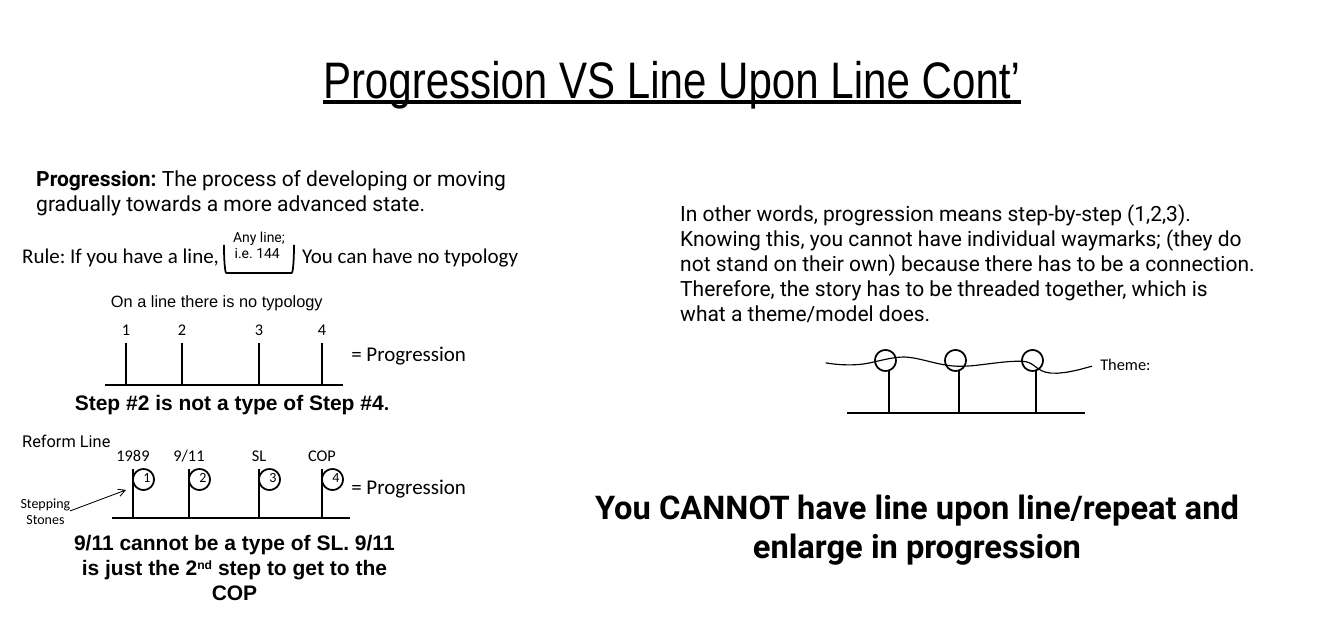
from dataclasses import dataclass
from lxml.etree import SubElement
from pptx import Presentation
from pptx.dml.color import RGBColor as Rgb
from pptx.enum.shapes import MSO_CONNECTOR as Link, MSO_SHAPE as Form
from pptx.enum.text import MSO_ANCHOR as Anchor, MSO_AUTO_SIZE as Fit, PP_ALIGN as Align
from pptx.oxml.ns import qn
from pptx.util import Inches, Pt


@dataclass(frozen=True)
class Theme:
    ink: Rgb = Rgb(0, 0, 0)
    paper: Rgb = Rgb(255, 255, 255)
    head: int = 44
    claim: int = 28
    body: int = 18
    label: int = 14
    note: int = 12
    thick: float = 1.5
    thin: float = 1
    hair: float = 0.75
    narrow: str = "Arial Narrow"
    plain: str = "Arial"
    round: str = "Roboto"
    soft: str = "Calibri"
    accent: str = "Lato"


COLS, ROWS = 192, 90


class Board:
    def __init__(self, deck, theme):
        self.theme = theme
        self.wide, self.high = deck.slide_width, deck.slide_height
        self.slide = deck.slides.add_slide(deck.slide_layouts[5])
        self.shapes = self.slide.shapes
        fill = self.slide.background.fill
        fill.solid()
        fill.fore_color.rgb = theme.paper

    def x(self, col):
        return round(self.wide * col / COLS)

    def y(self, row):
        return round(self.high * row / ROWS)

    def area(self, col, row, cols, rows):
        return self.x(col), self.y(row), self.x(cols), self.y(rows)

    def style(self, font, size, face, bold=False):
        font.size, font.name, font.bold = Pt(size), face, bold
        font.color.rgb = self.theme.ink

    def title(self, text, *area):
        item = self.shapes.title
        item.left, item.top, item.width, item.height = self.area(*area)
        frame = item.text_frame
        frame.text = text
        frame.vertical_anchor = Anchor.MIDDLE
        para = frame.paragraphs[0]
        para.alignment = Align.CENTER
        self.style(para.font, self.theme.head, self.theme.narrow)
        para.font.underline = True

    def text(self, text, area, size, face, mid=False, bold=False):
        frame = self.shapes.add_textbox(*self.area(*area)).text_frame
        frame.word_wrap = True
        frame.auto_size = Fit.SHAPE_TO_FIT_TEXT
        para = frame.paragraphs[0]
        para.alignment = Align.CENTER if mid else Align.LEFT
        self.style(para.font, size, face, bold)
        parts = [text] if isinstance(text, str) else text
        runs = []
        for part in parts:
            run = para.add_run()
            run.text = part
            runs.append(run)
        return runs

    def line(self, start, end, width=None, arrow=False):
        item = self.shapes.add_connector(
            Link.STRAIGHT, self.x(start[0]), self.y(start[1]), self.x(end[0]), self.y(end[1]))
        item.line.color.rgb = self.theme.ink
        item.line.width = Pt(width or self.theme.thick)
        if arrow:
            SubElement(item.line._get_or_add_ln(), qn("a:tailEnd"), type="arrow")
        SubElement(item._element.spPr, qn("a:effectLst"))

    def trim(self, item, width, fill=None):
        item.shadow.inherit = False
        item.line.color.rgb = self.theme.ink
        item.line.width = Pt(width)
        if fill is None:
            item.fill.background()
        else:
            item.fill.solid()
            item.fill.fore_color.rgb = fill

    def ring(self, col, row):
        item = self.shapes.add_shape(Form.OVAL, *self.area(col, row, 3, 3))
        self.trim(item, self.theme.thick)

    def cup(self, *area):
        item = self.shapes.add_shape(Form.LEFT_BRACKET, *self.area(*area))
        item.rotation = 270
        self.trim(item, self.theme.thick, self.theme.paper)

    def posts(self, cols, top, base, left, right):
        self.line((left, base), (right, base))
        for col in cols:
            self.line((col, top), (col, base))

    def thread(self, start, curves, steps=12):
        spots, last = [], start
        for one, two, end in curves:
            for step in range(1, steps + 1):
                t = step / steps
                u = 1 - t
                spots.append(tuple(
                    u**3 * a + 3 * u * u * t * b + 3 * u * t * t * c + t**3 * d
                    for a, b, c, d in zip(last, one, two, end)))
            last = end
        pen = self.shapes.build_freeform(Inches(start[0]), Inches(start[1]))
        pen.add_line_segments([(Inches(a), Inches(b)) for a, b in spots], close=False)
        self.trim(pen.convert_to_shape(), self.theme.thin)


def main():
    deck = Presentation()
    deck.slide_width, deck.slide_height = Inches(16), Inches(7.5)
    look = Theme()
    board = Board(deck, look)
    board.title("Progression VS Line Upon Line Cont’", 9.6, 3.6, 172.8, 15)

    terms = board.text(
        ["Progression: ", "The process of developing or moving gradually towards a more advanced state."],
        (4, 23, 77, 8.5), look.body, look.round)
    terms[0].font.bold = True
    board.text("Rule: If you have a line,", (2, 34, 31, 4.8), look.body, look.soft)
    board.cup(35, 32, 4, 10)
    board.text("Any line; i.e. 144 ", (32, 32, 10, 6), look.note, look.round, mid=True)
    board.text("You can have no typology", (42, 34, 35, 4.8), look.body, look.soft)

    board.text("On a line there is no typology", (9, 41, 44, 4), look.label, look.plain, mid=True)
    steps = (18, 26, 37, 46)
    board.posts(steps, 49, 55, 15, 49)
    for count, col in enumerate(steps, 1):
        board.text(str(count), (col - 3, 45, 6, 4), look.label, look.soft, mid=True)
    fact = board.text(["Step #2 is not a type of Step #4", ". "],
                      (8, 55, 51, 4.8), look.body, look.plain, mid=True, bold=True)
    fact[1].font.name = look.accent

    board.text("Reform Line", (2, 61, 18, 4), look.label, look.round)
    marks = {"1989": 19, "9/11": 27, "SL": 37, "COP": 46}
    board.posts(marks.values(), 67, 74, 16, 50)
    for count, (name, col) in enumerate(marks.items(), 1):
        board.text(name, (col - 4, 63, 8, 4), look.label, look.soft, mid=True)
        board.ring(col, 67)
        board.text(str(count), (col - 1, 66.4, 6, 3.6), look.note, look.soft, mid=True)
    for row in (48, 67):
        board.text("= Progression", (49, row, 20, 5), look.body, look.soft)
    board.text("Stepping Stones", (0, 70, 13, 6), look.note, look.soft, mid=True)
    board.line((10, 73), (18, 70), look.hair, arrow=True)
    end = board.text(
        ["9/11 cannot be a type of SL. 9/11 is just the 2", "nd", " step to get to the COP"],
        (8, 75, 51, 8.5), look.body, look.plain, mid=True, bold=True)
    end[1]._r.get_or_add_rPr().set("baseline", "30000")

    board.text(
        "In other words, progression means step-by-step (1,2,3). Knowing this, you cannot have "
        "individual waymarks; (they do not stand on their own) because there has to be a connection. "
        "Therefore, the story has to be threaded together, which is what a theme/model does.",
        (96, 28, 85, 19.4), look.body, look.round)
    board.posts((127, 137, 148), 53, 59, 121, 155)
    for col in (125, 135, 146):
        board.ring(col, 50)
    board.thread((9.83, 4.32), [
        ((9.95, 4.34), (10.07, 4.35), (10.22, 4.34)),
        ((10.38, 4.33), (10.58, 4.25), (10.77, 4.25)),
        ((10.97, 4.26), (11.16, 4.35), (11.39, 4.36)),
        ((11.61, 4.37), (11.88, 4.3), (12.15, 4.3)),
        ((12.42, 4.3), (12.26, 4.58), (13, 4.36)),
    ])
    board.text("Theme:", (156, 50, 14, 4), look.label, look.soft)
    board.text("You CANNOT have line upon line/repeat and enlarge in progression",
               (80, 69, 102, 12.5), look.claim, look.round, mid=True, bold=True)
    deck.save("out.pptx")


if __name__ == "__main__":
    main()
